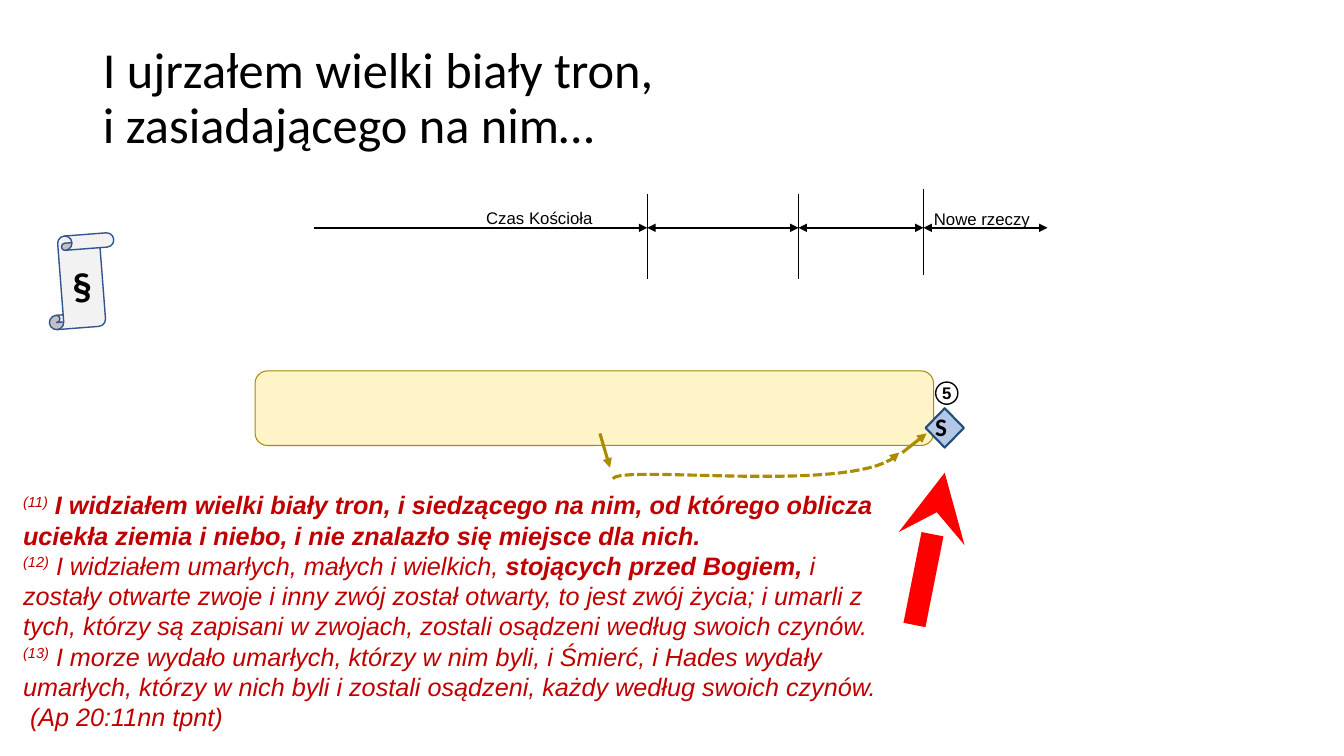
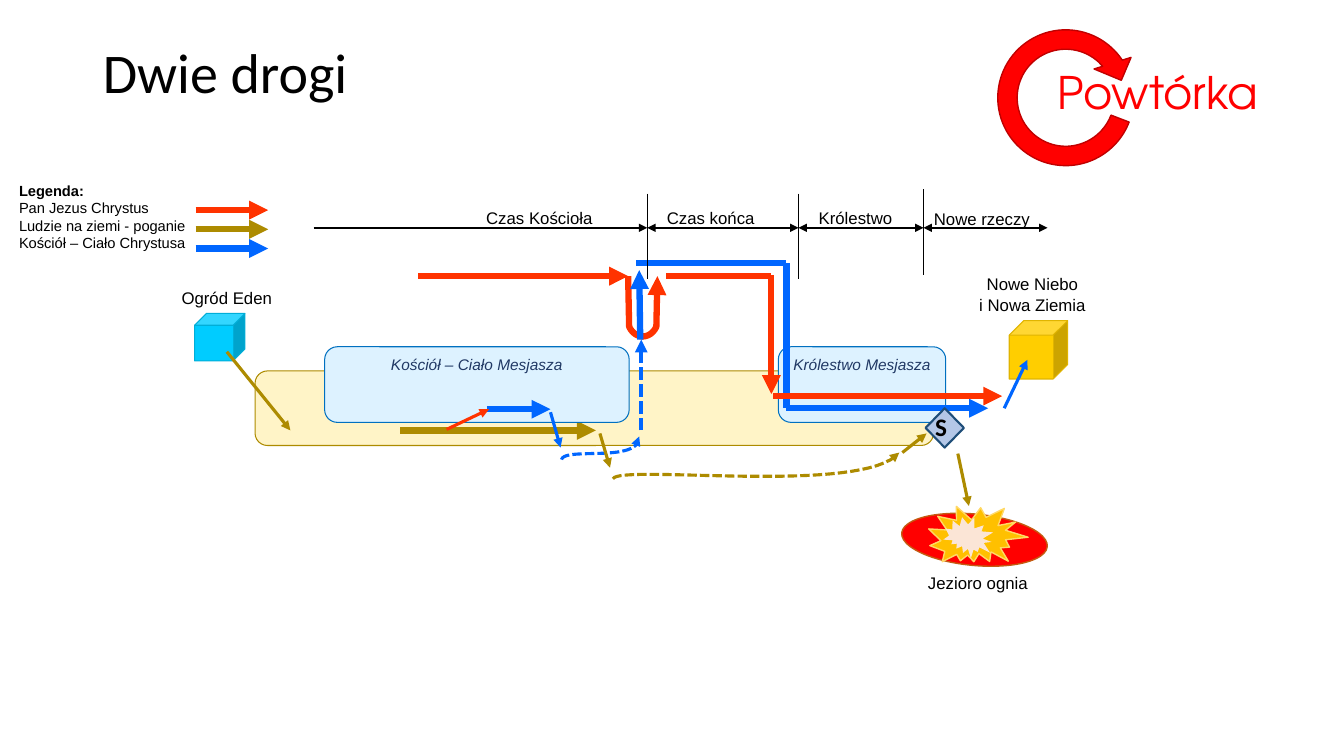
from dataclasses import dataclass
from itertools import pairwise

from lxml.etree import SubElement
from pptx import Presentation
from pptx.dml.color import RGBColor as Rgb
from pptx.enum.dml import MSO_LINE as Dash
from pptx.enum.shapes import MSO_CONNECTOR as Link, MSO_SHAPE as Form
from pptx.enum.text import MSO_ANCHOR as Anchor, MSO_AUTO_SIZE as Fit, PP_ALIGN as Align
from pptx.oxml.ns import qn
from pptx.util import Inches, Pt


@dataclass(frozen=True)
class Theme:
    head: str = "Calibri"
    body: str = "Arial"
    round: str = "TeX Gyre Adventor"
    black: str = "000000"
    white: str = "FFFFFF"
    gold: str = "AD8B00"
    cream: str = "FFF4C7"
    red: str = "FF3300"
    blue: str = "0066FF"
    pure: str = "FF0000"
    wine: str = "C00000"
    sky: str = "DDF2FF"
    rim: str = "0070C0"
    navy: str = "203864"
    small: float = 10.5
    note: int = 11
    label: int = 12
    text: int = 18
    sign: int = 28
    recap: int = 32
    bold: float = 4.5
    thin: float = 2.25


T = Theme()


def unit(cells):
    return Inches(cells / 10)


def style(runs, size, color=T.black, font=T.body, bold=False, italic=False):
    for run in runs:
        face = run.font
        face.name, face.size = font, Pt(size)
        face.bold, face.italic = bold, italic
        face.color.rgb = Rgb.from_string(color)


def fill_text(frame, text, size, align=Align.CENTER, anchor=Anchor.MIDDLE,
              inset=(0, 0), wrap=True, **looks):
    frame.text = text
    frame.word_wrap, frame.vertical_anchor = wrap, anchor
    frame.margin_left = frame.margin_right = unit(inset[0])
    frame.margin_top = frame.margin_bottom = unit(inset[1])
    for par in frame.paragraphs:
        par.alignment = align
        style(par.runs, size, **looks)


def stroke(shape, color, width, dash=False, head=None, tail=None):
    line = shape.line
    line.color.rgb, line.width = Rgb.from_string(color), Pt(width)
    if dash:
        line.dash_style = Dash.SQUARE_DOT
    props = shape._element.spPr
    for tag, kind in (("a:headEnd", head), ("a:tailEnd", tail)):
        if kind:
            SubElement(props.find(qn("a:ln")), qn(tag), type=kind)


def bend(a, b, c, d, steps=32):
    def point(t):
        u = 1 - t
        return tuple(u**3 * p + 3 * u * u * t * q + 3 * u * t * t * r + t**3 * s
                     for p, q, r, s in zip(a, b, c, d))
    return [point(i / steps) for i in range(steps + 1)]


@dataclass
class Pane:
    slide: object
    left: float
    top: float
    wide: float
    high: float

    def place(self, x, y):
        return unit(self.left + x), unit(self.top + y)

    def line(self, start, end, color, width, dash=False, head=None, tail="triangle"):
        link = self.slide.shapes.add_connector(
            Link.STRAIGHT, *self.place(*start), *self.place(*end))
        stroke(link, color, width, dash, head, tail)
        SubElement(link._element.spPr, qn("a:effectLst"))

    def curve(self, points, color, width, dash=False):
        first, *rest = [self.place(*p) for p in points]
        pen = self.slide.shapes.build_freeform(*first)
        pen.add_line_segments(rest, close=False)
        shape = pen.convert_to_shape()
        shape.fill.background()
        shape.shadow.inherit = False
        stroke(shape, color, width, dash, tail="triangle")

    def shape(self, form, box, fill, edge=None, width=0.75, turn=0, adjust=()):
        x, y, w, h = box
        item = self.slide.shapes.add_shape(form, *self.place(x, y), unit(w), unit(h))
        item.shadow.inherit = False
        item.fill.solid()
        item.fill.fore_color.rgb = Rgb.from_string(fill)
        if edge:
            stroke(item, edge, width)
        else:
            item.line.fill.background()
        item.rotation = turn
        for i, value in enumerate(adjust):
            item.adjustments[i] = value
        return item

    def text(self, box, text, size=T.label, inset=(0.3, 0.3), **looks):
        x, y, w, h = box
        item = self.slide.shapes.add_textbox(*self.place(x, y), unit(w), unit(h))
        fill_text(item.text_frame, text, size, inset=inset, **looks)
        return item.text_frame


def title(pane, text, size):
    item = pane.slide.shapes.title
    item.left, item.top = pane.place(0, 0)
    item.width, item.height = unit(pane.wide), unit(pane.high)
    fill_text(item.text_frame, text, size, Align.LEFT, Anchor.TOP, (1, 0.5), font=T.head)
    item.text_frame.auto_size = Fit.NONE
    item.text_frame.paragraphs[0].line_spacing = 0.9


def axis(pane, labels):
    stops = (0, 33.1, 48.1, 60.5, pane.wide)
    for i, (start, end) in enumerate(pairwise(stops)):
        pane.line((start, 3.8), (end, 3.8), T.black, 1.5, head="triangle" if i else None)
    for x, y in zip(stops[1:4], (0.4, 0.4, 0)):
        pane.line((x, y), (x, y + 8.5), T.black, 0.5, tail=None)
    for x, y, w, name in labels:
        pane.text((x, y, w, 2.6), name)


def band(pane):
    pane.shape(Form.ROUNDED_RECTANGLE, (0, 0, pane.wide, pane.high), T.cream, T.gold)


def trial(pane):
    pane.line((0, 2.5), (1, 5.9), T.gold, T.thin)
    pane.curve(bend((1.3, 7), (2, 5.5), (26.2, 8.7), (29.7, 4.4)), T.gold, T.thin, True)
    pane.line((30, 4.4), (32.4, 2.5), T.gold, T.thin)
    seat = pane.shape(Form.DIAMOND, (32.3, 0, 3.8, 3.9), "B4C7E7", "1F4E79", 1.5)
    fill_text(seat.text_frame, "S", T.text, Align.LEFT, inset=(0, 0.4),
              font=T.head, bold=True)
    seat.text_frame.paragraphs[0].line_spacing = 0.9


def scroll(pane):
    item = pane.shape(Form.VERTICAL_SCROLL, (0, 0, pane.wide, pane.high),
                      "F2F2F2", "325491", 1, 355.6, (0.203,))
    fill_text(item.text_frame, "§", T.sign, inset=(1, 0.5), font=T.head, bold=True)


def pointer(pane):
    dot = pane.shape(Form.OVAL, (2.1, 0, 2.2, 2.2), T.white, T.black, 1)
    fill_text(dot.text_frame, "5", T.label, wrap=False, bold=True)
    pane.line((0, pane.high), (3, 9), T.pure, 16, tail="stealth")


def verses(pane, lines):
    frame = pane.text((0, 0, pane.wide, pane.high), "", inset=(1, 0.5))
    frame.vertical_anchor = Anchor.TOP
    for i, (mark, parts) in enumerate(lines):
        par = frame.add_paragraph() if i else frame.paragraphs[0]
        par.alignment = Align.LEFT
        if mark:
            run = par.add_run()
            run.text = mark
            style([run], T.text, T.wine, italic=True)
            run.font._element.set("baseline", "30000")
        for text, bold in parts:
            run = par.add_run()
            run.text = text
            style([run], T.text, T.wine, bold=bold, italic=True)


def realms(pane):
    def realm(box, name):
        item = pane.shape(Form.ROUNDED_RECTANGLE, box, T.sky, T.rim)
        fill_text(item.text_frame, name, T.note, anchor=Anchor.TOP, inset=(1, 0.5),
                  wrap=False, color=T.navy, italic=True)

    realm((45, 0, 16.6, 7.5), "Królestwo Mesjasza")
    pane.line((7.5, 8.3), (26.9, 8.3), T.gold, T.bold)
    realm((0, 0, 30.2, 7.5), "Kościół – Ciało Mesjasza")


def roads(pane):
    loop = [(22.3, 1.4), *bend((22.4, 6.4), (23, 7.7), (24.5, 7.7), (25.1, 6.4)), (25.2, 1.4)]
    plain = (
        ((1.5, 1.4), (22.3, 1.4), T.red, True),
        ((8.3, 14.6), (14.6, 14.6), T.blue, True),
        ((23.1, 0.1), (38, 0.1), T.blue, False),
        ((36.5, 1.3), (36.5, 13.1), T.red, True),
        ((26.1, 1.4), (36.5, 1.4), T.red, False),
        ((38, 0.1), (38, 14.5), T.blue, False),
        ((36.7, 13.3), (59.4, 13.3), T.red, True),
        ((38, 14.5), (58, 14.5), T.blue, True),
    )
    for start, end, color, tip in plain:
        pane.line(start, end, color, T.bold, tail="triangle" if tip else None)
    pane.curve(loop, T.red, T.bold)
    pane.curve(bend((15.7, 19.6), (16, 18.3), (23.5, 20), (23.4, 17.3)), T.blue, T.thin, True)
    pane.line((23.5, 7.7), (23.4, 0.8), T.blue, T.bold)
    pane.line((23.6, 16.7), (23.6, 7.7), T.blue, 3, True)
    pane.line((14.6, 14.9), (15.6, 18.4), T.blue, T.thin)
    pane.line((4.3, 16.6), (8.5, 14.6), T.red, T.thin)


def lake(pane):
    pane.line((5.6, 0), (6.7, 5.2), T.gold, T.thin)
    pane.text((0.4, 11.5, 14.4, 2.6), "Jezioro ognia")
    pane.shape(Form.FLOWCHART_CONNECTOR, (0, 6, 14.5, 5.1), T.pure, "C55A11", 1, 5.4)
    pane.shape(Form.EXPLOSION2, (2.7, 4.8, 9.7, 6.8), "FFC000", "FFD966", 1, 16.2)
    pane.shape(Form.EXPLOSION2, (4.4, 6.1, 4.7, 4.5), "FBE5D6", turn=56.2)


def eden(pane):
    pane.shape(Form.CUBE, (4, 2.9, 5, 4.7), "00CCFF", "00AED8")
    pane.line((7.2, 6.7), (13.5, 14.5), T.gold, T.thin)
    pane.text((0, 0, pane.wide, 2.6), "Ogród Eden")


def heaven(pane):
    pane.shape(Form.CUBE, (4.9, 4.9, 5.8, 5.8), "FFCE00", "E0B400")
    pane.line((4.4, 13.6), (6.7, 8.8), T.blue, T.thin)
    pane.text((0, 0, pane.wide, 4.6), "Nowe Niebo\ni Nowa Ziemia")


def legend(pane):
    rows = (("Pan Jezus Chrystus", T.red), ("Ludzie na ziemi - poganie", T.gold),
            ("Kościół – Ciało Chrystusa", T.blue))
    for i, (_, color) in enumerate(rows):
        y = 3.35 + 1.9 * i
        pane.line((18.5, y), (25.7, y), color, T.bold)
    names = "\n".join(["Legenda:", *(name for name, _ in rows)])
    frame = pane.text((0, 0, 19.9, pane.high), names, T.small, (1, 0.5),
                      align=Align.LEFT, anchor=Anchor.TOP)
    style(frame.paragraphs[0].runs, T.small, bold=True)


def recap(pane):
    pane.shape(Form.CIRCULAR_ARROW, (0, 0, 15.4, 15.4), T.pure, T.wine, 1, 342.6,
               (0.125, 11.423, 204.577, 23.031, 0.125))
    pane.text((5.9, 3.9, 28.8, 6.4), "Powtórka", T.recap, (1, 0.5), align=Align.LEFT,
              anchor=Anchor.TOP, color=T.pure, font=T.round)


LABELS = ((15.2, 1.5, 14.4, "Czas Kościoła"), (33.7, 1.5, 11.4, "Czas końca"),
          (49.1, 1.5, 9.3, "Królestwo"), (60.5, 1.6, 11.6, "Nowe rzeczy"))
VERSES = (
    ("(11)", ((" I widziałem wielki biały tron, i siedzącego na nim, od którego oblicza "
               "uciekła ziemia i niebo, i nie znalazło się miejsce dla nich.", True),)),
    ("(12)", ((" I widziałem umarłych, małych i wielkich, ", False),
              ("stojących przed Bogiem, ", True),
              ("i zostały otwarte zwoje i inny zwój został otwarty, to jest zwój życia; "
               "i umarli z tych, którzy są zapisani w zwojach, zostali osądzeni według "
               "swoich czynów.", False))),
    ("(13)", ((" I morze wydało umarłych, którzy w nim byli, i Śmierć, i Hades wydały "
               "umarłych, którzy w nich byli i zostali osądzeni, każdy według swoich "
               "czynów.", False),)),
    ("", ((" (Ap 20:11nn tpnt)", False),)),
)


def start(deck, text, size):
    slide = deck.slides.add_slide(deck.slide_layouts[5])
    title(Pane(slide, 9.2, 4, 115, 7.8), text, size)
    band(Pane(slide, 25.3, 36.8, 67.3, 7.4))
    return slide


def finish(slide, labels):
    axis(Pane(slide, 31.1, 18.8, 72.8, 8.9), labels)
    trial(Pane(slide, 59.5, 40.5, 36.1, 7))


def throne(deck):
    slide = start(deck, "I ujrzałem wielki biały tron, \vi zasiadającego na nim…", 36)
    finish(slide, LABELS[::3])
    verses(Pane(slide, 1.3, 48.1, 87.2, 25.2), VERSES)
    scroll(Pane(slide, 4.6, 23.3, 7, 9.2))
    pointer(Pane(slide, 90.7, 37.9, 4.9, 24.1))


def ways(deck):
    slide = start(deck, "Dwie drogi", 40)
    realms(Pane(slide, 32.2, 34.4, 61.6, 8.3))
    roads(Pane(slide, 40, 26, 60, 20))
    finish(slide, LABELS)
    lake(Pane(slide, 89.4, 45, 14.8, 14.1))
    heaven(Pane(slide, 95.2, 26.9, 14.4, 13.6))
    eden(Pane(slide, 15.3, 28.2, 14.4, 14.5))
    legend(Pane(slide, 0.9, 17.5, 25.7, 8.1))
    recap(Pane(slide, 98, 2, 34.7, 15.4))


def main():
    deck = Presentation()
    deck.slide_width, deck.slide_height = Inches(13.33), Inches(7.5)
    throne(deck)
    ways(deck)
    deck.save("out.pptx")


if __name__ == "__main__":
    main()
